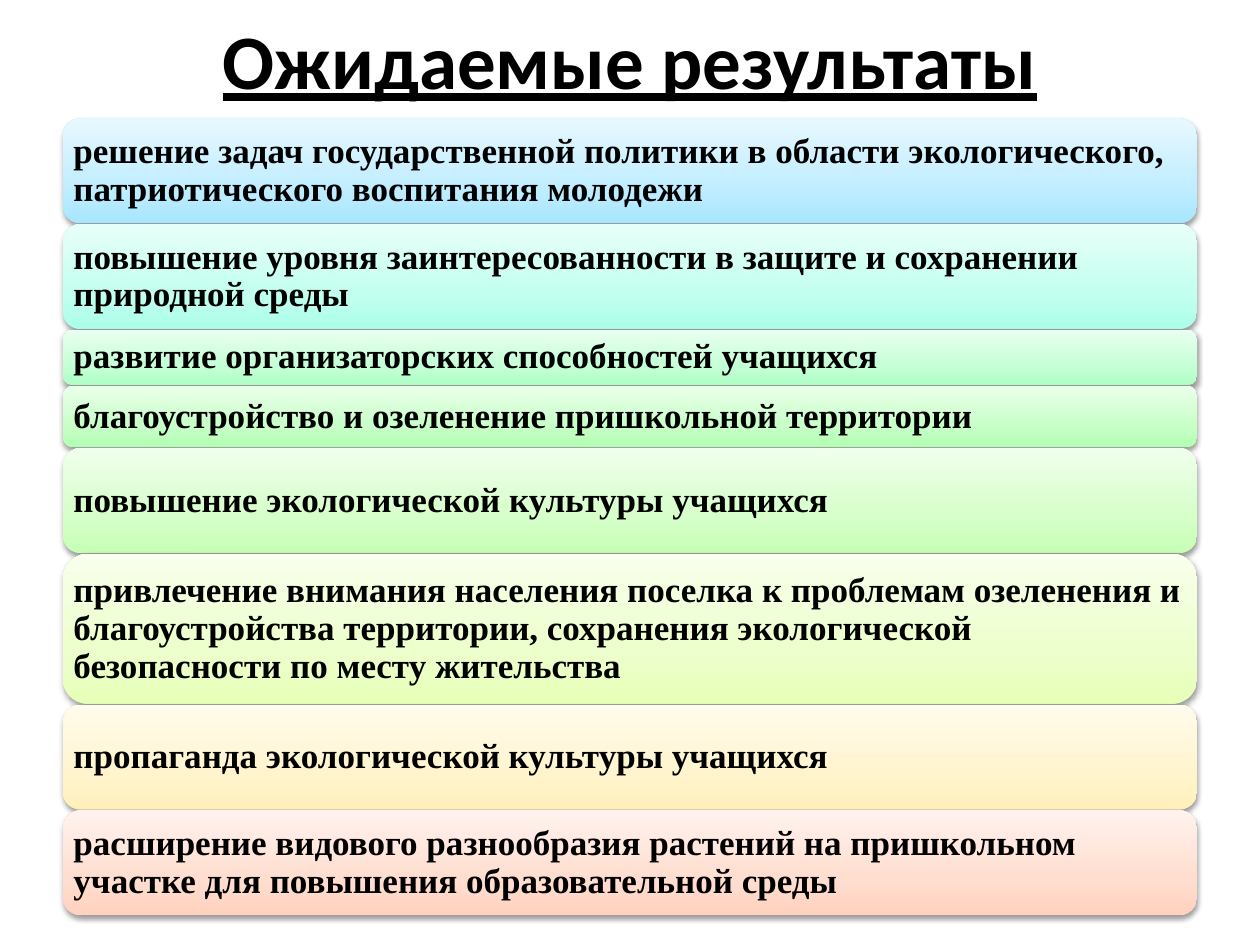
from copy import deepcopy
from dataclasses import dataclass

from pptx import Presentation
from pptx.dml.color import RGBColor
from pptx.enum.shapes import MSO_SHAPE
from pptx.enum.text import MSO_ANCHOR, PP_ALIGN
from pptx.oxml import parse_xml
from pptx.oxml.ns import nsdecls, qn
from pptx.shapes.autoshape import Shape
from pptx.slide import Slide
from pptx.util import Pt


@dataclass(frozen=True)
class Theme:
    ink: str = "000000"
    head_font: str = "Calibri"
    body_font: str = "Times New Roman"
    head_size: float = 44
    body_size: float = 20


@dataclass(frozen=True)
class Bar:
    text: str
    height: float
    low: str
    mid: str
    high: str


THEME = Theme()
LEFT, WIDTH = 36, 648
TOP, GAP = 67.7, 0.4
PAD = 6
STOPS = (0, 0.35, 1)
ROUND = 0.16667  # corner radius as a share of bar height
INSET = 0.29  # share of the radius kept clear of text

BARS = [
    Bar("решение задач государственной политики в области экологического, "
        "патриотического воспитания молодежи", 60, "A7E6FF", "C1EDFF", "E7F8FF"),
    Bar("повышение уровня заинтересованности в защите и сохранении природной среды",
        60, "AAFFEA", "C3FFEF", "E8FFF9"),
    Bar("развитие организаторских способностей учащихся",
        31.6, "AEFFC6", "C5FFD6", "E9FFEF"),
    Bar("благоустройство и озеленение пришкольной территории",
        35.2, "B1FFB2", "C8FFC8", "EAFFEA"),
    Bar("повышение экологической культуры учащихся",
        60, "C6FFB4", "D6FFCA", "EFFFEB"),
    Bar("привлечение внимания населения поселка к проблемам озеленения и "
        "благоустройства территории, сохранения экологической безопасности "
        "по месту жительства", 85.8, "E7FFB7", "EDFFCC", "F8FFEC"),
    Bar("пропаганда экологической культуры учащихся",
        60, "FFF0BA", "FFF4CE", "FFFBEC"),
    Bar("расширение видового разнообразия растений на пришкольном участке "
        "для повышения образовательной среды", 60, "FFD2BD", "FFDED0", "FFF2ED"),
]


def set_text(shape: Shape, text: str, face: str, size: float, align: PP_ALIGN) -> None:
    frame = shape.text_frame
    frame.text = text
    frame.word_wrap = True
    frame.vertical_anchor = MSO_ANCHOR.MIDDLE
    line = frame.paragraphs[0]
    line.alignment = align
    font = line.runs[0].font
    font.name, font.size, font.bold = face, Pt(size), True
    font.color.rgb = RGBColor.from_string(THEME.ink)


def fill_fade(shape: Shape, tints: tuple[str, ...]) -> None:
    """Fade upwards from the first tint to the last."""
    shape.fill.gradient()
    shape.fill.gradient_angle = 90
    stops = shape._element.spPr.find(".//" + qn("a:gsLst"))
    stops.append(deepcopy(stops[0]))
    for stop, place, tint in zip(shape.fill.gradient_stops, STOPS, tints):
        stop.position = place
        stop.color.rgb = RGBColor.from_string(tint)


def add_shade(shape: Shape) -> None:
    """Cast a soft shadow straight down."""
    shape.shadow.inherit = False
    shape._element.spPr.find(qn("a:effectLst")).append(parse_xml(
        f'<a:outerShdw {nsdecls("a")} blurRad="{Pt(3.1)}" dist="{Pt(1.6)}" '
        f'dir="5400000" rotWithShape="0"><a:srgbClr val="{THEME.ink}">'
        '<a:alpha val="38000"/></a:srgbClr></a:outerShdw>'))


def add_title(slide: Slide, text: str) -> None:
    box = slide.shapes.add_textbox(Pt(LEFT), Pt(-11.5), Pt(WIDTH), Pt(90))
    set_text(box, text, THEME.head_font, THEME.head_size, PP_ALIGN.CENTER)
    box.text_frame.paragraphs[0].runs[0].font.underline = True


def add_bar(slide: Slide, bar: Bar, top: float) -> None:
    shape = slide.shapes.add_shape(
        MSO_SHAPE.ROUNDED_RECTANGLE, Pt(LEFT), Pt(top), Pt(WIDTH), Pt(bar.height))
    shape.adjustments[0] = ROUND
    fill_fade(shape, (bar.low, bar.mid, bar.high))
    shape.line.fill.background()
    add_shade(shape)
    set_text(shape, bar.text, THEME.body_font, THEME.body_size, PP_ALIGN.LEFT)
    frame = shape.text_frame
    side = Pt(PAD - INSET * ROUND * bar.height)
    frame.margin_left = frame.margin_right = side
    frame.margin_top = frame.margin_bottom = side
    frame.paragraphs[0].line_spacing = 0.9


def main() -> None:
    deck = Presentation()
    deck.slide_width, deck.slide_height = Pt(720), Pt(540)
    slide = deck.slides.add_slide(deck.slide_layouts[6])
    add_title(slide, "Ожидаемые результаты")
    top = TOP
    for bar in BARS:
        add_bar(slide, bar, top)
        top += bar.height + GAP
    deck.save("out.pptx")


if __name__ == "__main__":
    main()
